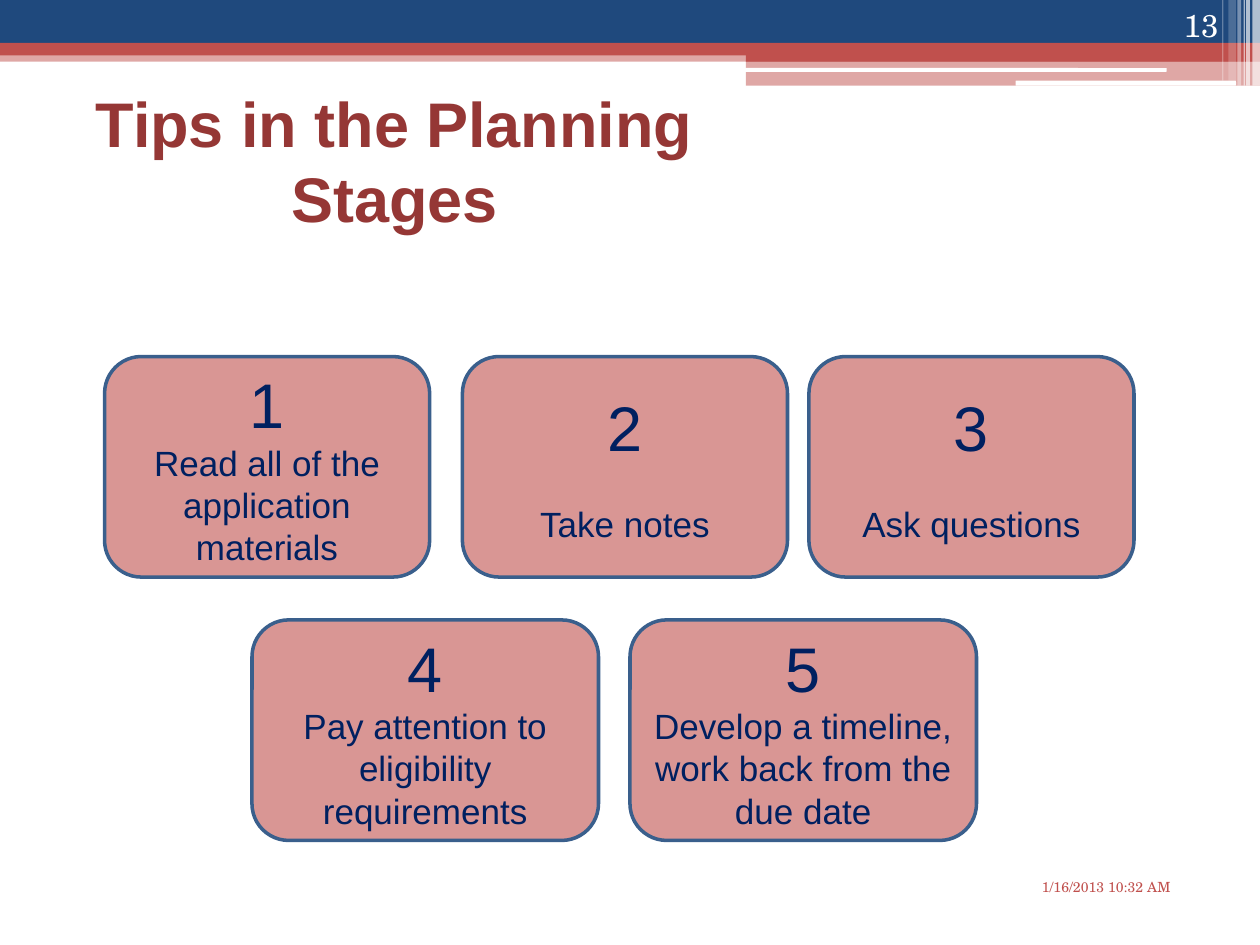
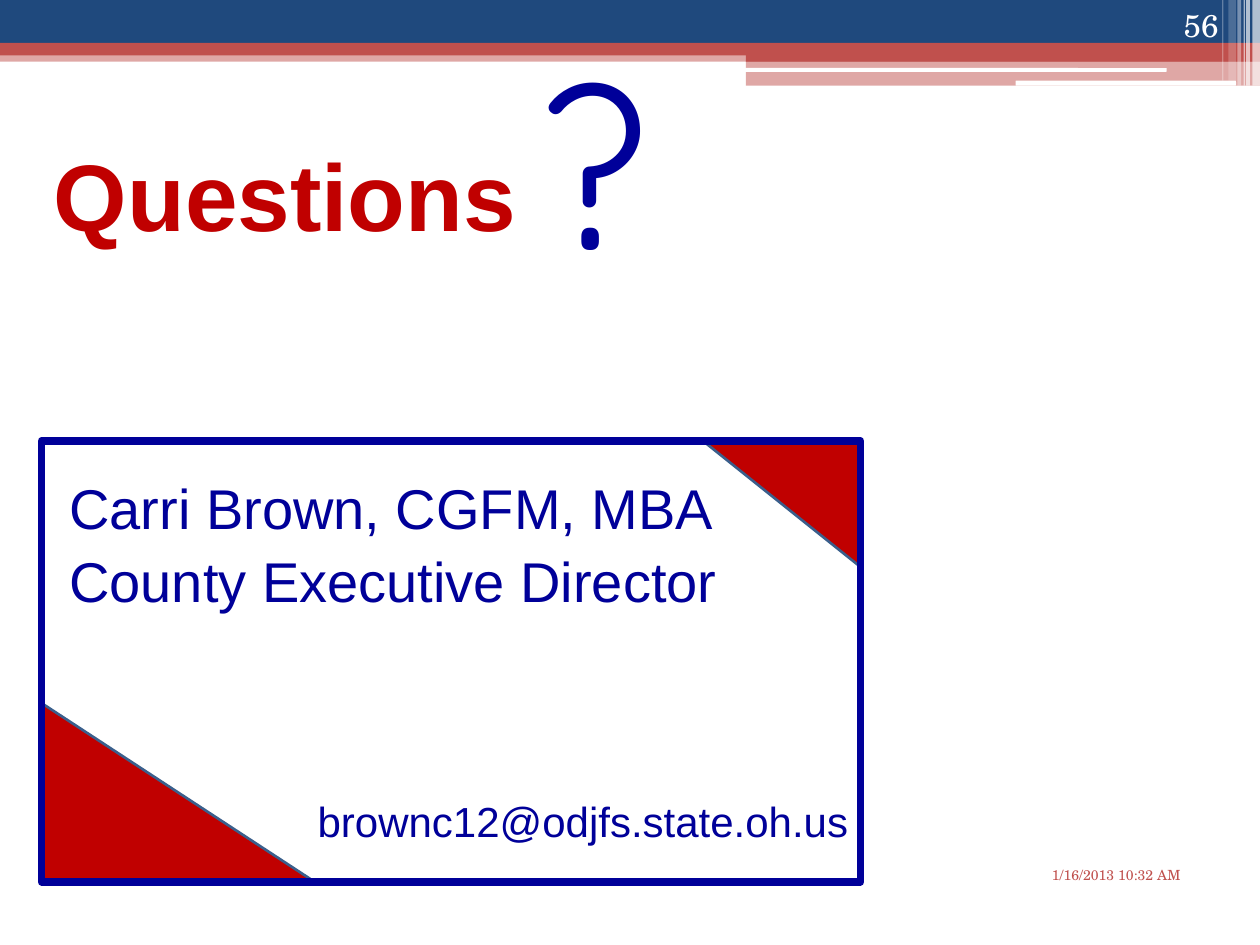
from lxml import etree
from pptx import Presentation
from pptx.dml import color
from pptx.enum import shapes, text
from pptx.oxml import ns
from pptx.util import Pt

PX = 9144
KIND = shapes.MSO_SHAPE
ALIGN = text.PP_ALIGN
ANCHOR = text.MSO_ANCHOR
NAVY, RED, WHITE = "1F497D", "C0504D", "FFFFFF"
EDGE, ROSE, INK = "3A5F8C", "D99694", "002060"
CRIMSON, BLUE, BRICK = "C00000", "000099", "953735"
SERIF = "TeX Gyre Schola"

BANDS = [
    ((0, 40, 1000, 9), RED, 50),
    ((0, 0, 1000, 34), NAVY, 100),
    ((0, 34, 1000, 10), RED, 100),
    ((592, 39, 408, 10), RED, 100),
    ((592, 48, 408, 20), RED, 50),
]
LINES = [(591, 54, 335, 3), (806, 64, 175, 4)]
STRIPES = [
    (994, 6, 68, 65),
    (989, 3, 68, 65),
    (987, 1, 68, 60),
    (982, 3, 68, 40),
    (975, 6, 64, 20),
    (970, 1, 64, 30),
]
TIPS = [
    ((83, 283, 258, 175), "Read all of the application materials", 0),
    ((367, 283, 258, 175), "Take notes", 22),
    ((642, 283, 258, 175), "Ask questions", 22),
    ((200, 492, 275, 175), "Pay attention to eligibility requirements", 0),
    ((500, 492, 275, 175), "Develop a timeline, work back from the due date", 0),
]


def rgb(code):
    return color.RGBColor.from_string(code)


def apply(item, values):
    for name, value in values.items():
        setattr(item, name, value)


def scale(box):
    return [n * PX for n in box]


def shape(slide, box, fill=None, kind=KIND.RECTANGLE, alpha=100, line=None, width=1):
    item = slide.shapes.add_shape(kind, *scale(box))
    item.shadow.inherit = False
    if fill:
        item.fill.solid()
        item.fill.fore_color.rgb = rgb(fill)
        if alpha < 100:
            tint = item.fill._xPr.find(".//" + ns.qn("a:srgbClr"))
            etree.SubElement(tint, ns.qn("a:alpha"), val=str(alpha * 1000))
    else:
        item.fill.background()
    if line:
        item.line.color.rgb = rgb(line)
        item.line.width = Pt(width)
    else:
        item.line.fill.background()
    return item


def write(frame, rows, ink, font="Arial", bold=False, anchor=ANCHOR.TOP):
    apply(frame, {"word_wrap": True, "vertical_anchor": anchor})
    for i, (words, size, align, before) in enumerate(rows):
        para = frame.add_paragraph() if i else frame.paragraphs[0]
        apply(para, {"alignment": align, "space_before": Pt(before)})
        run = para.add_run()
        run.text = words
        apply(run.font, {"name": font, "size": Pt(size), "bold": bold})
        run.font.color.rgb = rgb(ink)


def label(slide, box, words, size, ink, align=ALIGN.LEFT, **style):
    item = slide.shapes.add_textbox(*scale(box))
    write(item.text_frame, [(words, size, align, 0)], ink, **style)


def header(slide):
    for box, fill, alpha in BANDS:
        shape(slide, box, fill, alpha=alpha)
    for box in LINES:
        shape(slide, box, WHITE, KIND.ROUNDED_RECTANGLE)
    for left, width, height, alpha in STRIPES:
        shape(slide, (left, 0, width, height), WHITE, alpha=alpha)


def footer(slide, left, top, page):
    label(slide, (left, top, 146, 33), "1/16/2013 10:32 AM", 8, RED, font=SERIF)
    label(slide, (894, 0, 83, 40), page, 18, WHITE, ALIGN.RIGHT,
          font=SERIF, anchor=ANCHOR.BOTTOM)


def title(slide, box, words, size, ink, align):
    label(slide, box, words, size, ink, align, bold=True, anchor=ANCHOR.MIDDLE)


def card(slide, box, digit, words, gap):
    item = shape(slide, box, ROSE, KIND.ROUNDED_RECTANGLE, line=EDGE, width=2)
    rows = [(digit, 36, ALIGN.CENTER, 0), (words, 20, ALIGN.CENTER, gap)]
    write(item.text_frame, rows, INK, anchor=ANCHOR.MIDDLE)


def contact(slide, box):
    left, top, width, height = box
    wedge = {"fill": CRIMSON, "kind": KIND.RIGHT_TRIANGLE, "line": EDGE, "width": 1.5}
    shape(slide, (left, top + height - 142, 217, 142), **wedge)
    corner = shape(slide, (left + width - 125, top, 125, 100), **wedge)
    corner.rotation = 180
    frame = shape(slide, box, line=BLUE, width=4.25).text_frame
    apply(frame, {"margin_left": 22 * PX, "margin_top": 26 * PX})
    rows = [
        ("Carri Brown, CGFM, MBA", 32, ALIGN.LEFT, 0),
        ("County Executive Director", 32, ALIGN.LEFT, 3),
        ("brownc12@odjfs.state.oh.us", 24, ALIGN.RIGHT, 104),
    ]
    write(frame, rows, BLUE)


def tips(slide):
    header(slide)
    title(slide, (42, 67, 542, 120), "Tips in the Planning Stages", 36, BRICK,
          ALIGN.CENTER)
    for digit, (box, words, gap) in enumerate(TIPS, 1):
        card(slide, box, str(digit), words, gap)
    footer(slide, 817, 692, "13")


def closing(slide):
    header(slide)
    title(slide, (33, 108, 392, 92), "Questions", 54, CRIMSON, ALIGN.LEFT)
    contact(slide, (33, 350, 650, 350))
    footer(slide, 825, 683, "56")
    label(slide, (417, 13, 158, 229), "?", 130, BLUE, font="Quicksand")


def main():
    deck = Presentation()
    apply(deck, {"slide_width": 1000 * PX, "slide_height": 750 * PX})
    for build in (tips, closing):
        build(deck.slides.add_slide(deck.slide_layouts[6]))
    deck.save("out.pptx")


if __name__ == "__main__":
    main()
